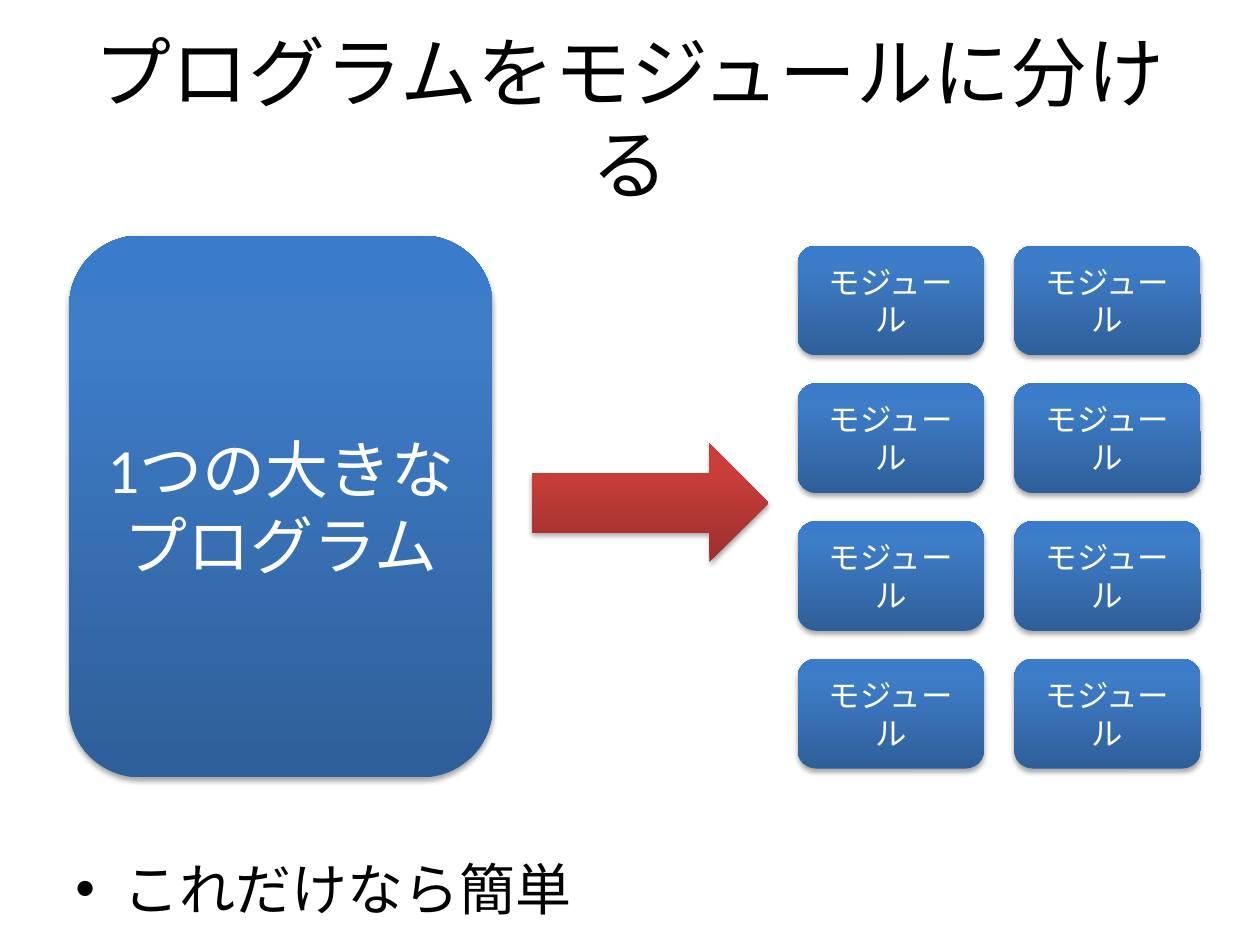
from dataclasses import dataclass

from lxml import etree
from pptx import Presentation
from pptx import util as u
from pptx.dml.color import RGBColor
from pptx.enum import shapes, text
from pptx.oxml import ns


@dataclass(frozen=True)
class Theme:
    font: str = "Calibri"
    ink: str = "000000"
    light: str = "FFFFFF"
    blue: tuple = ((0, "2F5F99"), (80, "3D7CC7"), (100, "3A7CCB"))
    red: tuple = ((0, "9C2F2D"), (80, "CB3E3A"), (100, "CE3B37"))
    title_size: int = 44
    program_size: int = 36
    body_size: int = 32
    module_size: int = 18


THEME = Theme()


def add_element(parent, tag, **attributes):
    element = etree.SubElement(parent, ns.qn(tag))
    for name, value in attributes.items():
        element.set(name, str(value))
    return element


def write_text(shape, lines, size, color, align=text.PP_ALIGN.CENTER):
    frame = shape.text_frame
    frame.word_wrap = True
    frame.vertical_anchor = text.MSO_ANCHOR.MIDDLE
    frame.text = "\n".join(lines)
    for paragraph in frame.paragraphs:
        paragraph.alignment = align
        for run in paragraph.runs:
            run.font.name = THEME.font
            run.font.size = u.Pt(size)
            run.font.color.rgb = RGBColor.from_string(color)


def add_glossy_shape(slide, kind, box, stops):
    shape = slide.shapes.add_shape(kind, *map(u.Inches, box))
    shape.line.fill.background()
    shape.fill.gradient()
    shape.fill.gradient_angle = 90
    stop_list = shape._element.spPr.find(".//" + ns.qn("a:gsLst"))
    stop_list.clear()
    for position, color in stops:
        stop = add_element(stop_list, "a:gs", pos=position * 1000)
        add_element(stop, "a:srgbClr", val=color)
    shape.shadow.inherit = False
    effects = shape._element.spPr.find(ns.qn("a:effectLst"))
    shadow = add_element(effects, "a:outerShdw", blurRad=u.Pt(3.1), dist=u.Pt(1.8),
                         dir=90 * 60000, rotWithShape=0)
    shadow_color = add_element(shadow, "a:srgbClr", val=THEME.ink)
    add_element(shadow_color, "a:alpha", val=35000)
    return shape


def add_title(slide, box):
    title = slide.shapes.add_textbox(*map(u.Inches, box))
    write_text(title, ["プログラムをモジュールに分ける"], THEME.title_size, THEME.ink)


def add_program(slide, box):
    program = add_glossy_shape(slide, shapes.MSO_SHAPE.ROUNDED_RECTANGLE, box, THEME.blue)
    write_text(program, ["1つの大きな", "プログラム"], THEME.program_size, THEME.light)


def add_arrow(slide, box):
    add_glossy_shape(slide, shapes.MSO_SHAPE.RIGHT_ARROW, box, THEME.red)


def add_modules(slide, box, rows=4, columns=2, width=1.48, height=0.87):
    left, top, total_width, total_height = box
    column_step = (total_width - width) / (columns - 1)
    row_step = (total_height - height) / (rows - 1)
    for row in range(rows):
        for column in range(columns):
            cell = (left + column * column_step, top + row * row_step, width, height)
            module = add_glossy_shape(slide, shapes.MSO_SHAPE.ROUNDED_RECTANGLE, cell, THEME.blue)
            write_text(module, ["モジュール"], THEME.module_size, THEME.light)


def add_remark(slide, box):
    remark = slide.shapes.add_textbox(*map(u.Inches, box))
    write_text(remark, ["これだけなら簡単"], THEME.body_size, THEME.ink, text.PP_ALIGN.LEFT)
    properties = remark.text_frame.paragraphs[0]._p.get_or_add_pPr()
    properties.set("marL", str(u.Inches(0.38)))
    properties.set("indent", str(u.Inches(-0.38)))
    add_element(properties, "a:buFont", typeface="Arial")
    add_element(properties, "a:buChar", char="•")


def main():
    presentation = Presentation()
    presentation.slide_width = u.Inches(10)
    presentation.slide_height = u.Inches(7.5)
    slide = presentation.slides.add_slide(presentation.slide_layouts[6])
    add_title(slide, (0.5, 0.3, 9, 1.25))
    add_remark(slide, (0.5, 6.7, 9, 0.7))
    add_arrow(slide, (4.22, 3.52, 1.88, 0.94))
    add_program(slide, (0.55, 1.87, 3.36, 4.3))
    add_modules(slide, (6.33, 1.95, 3.2, 4.15))
    presentation.save("out.pptx")


if __name__ == "__main__":
    main()
